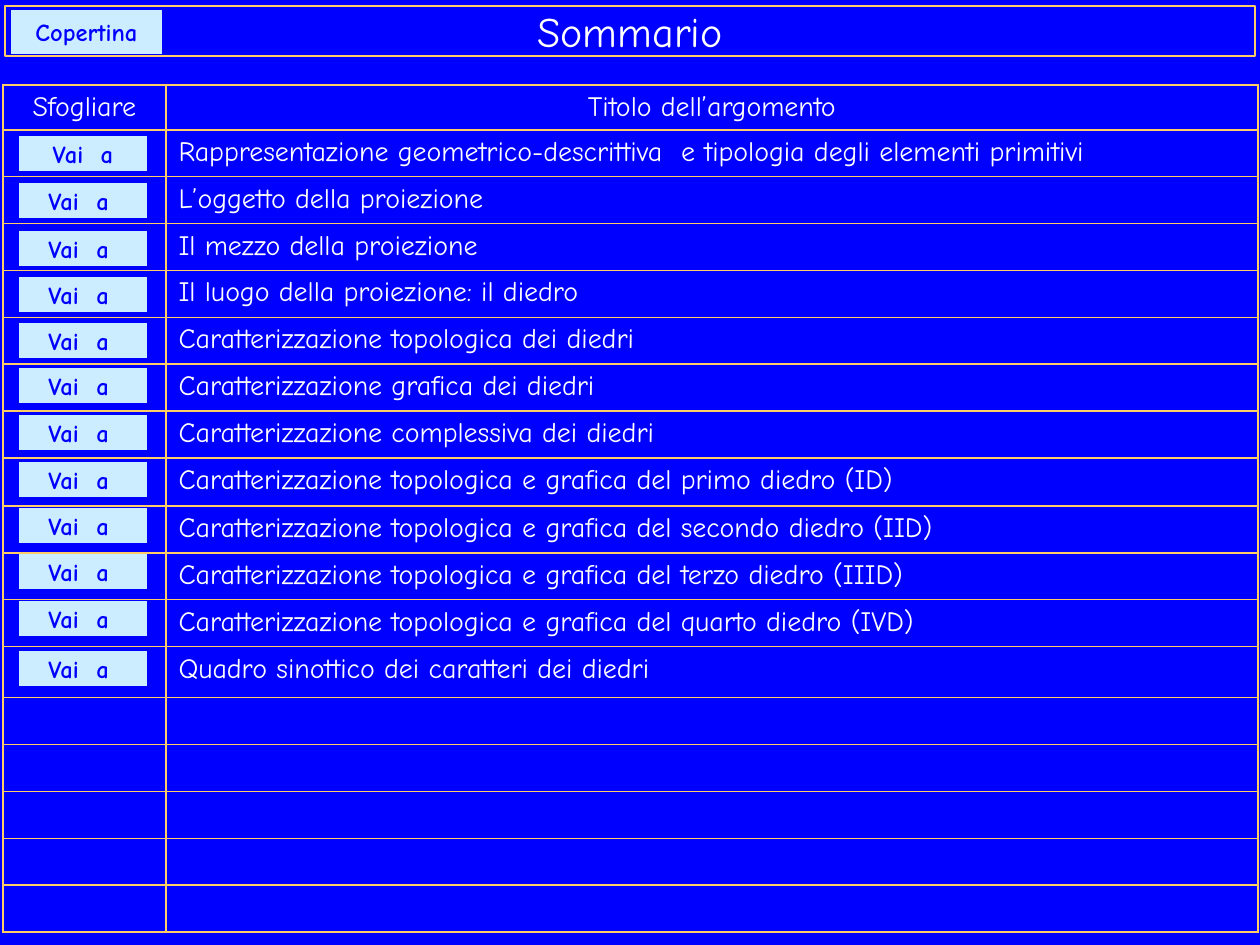
"""Build the summary slide with its table of topics and navigation buttons."""
import lxml.etree
import pptx
import pptx.dml.color
import pptx.enum.shapes
import pptx.enum.text
import pptx.oxml.ns
import pptx.util

BLUE = pptx.dml.color.RGBColor(0x00, 0x00, 0xFF)
WHITE = pptx.dml.color.RGBColor(0xFF, 0xFF, 0xFF)
GOLD = pptx.dml.color.RGBColor(0xFF, 0xCC, 0x66)
SKY = pptx.dml.color.RGBColor(0xCC, 0xEC, 0xFF)

CENTER = pptx.enum.text.PP_ALIGN.CENTER
LEFT = pptx.enum.text.PP_ALIGN.LEFT
MIDDLE = pptx.enum.text.MSO_ANCHOR.MIDDLE

TOPICS = [
    "Rappresentazione geometrico-descrittiva  e tipologia degli elementi primitivi",
    "L’oggetto della proiezione",
    "Il mezzo della proiezione",
    "Il luogo della proiezione: il diedro",
    "Caratterizzazione topologica dei diedri",
    "Caratterizzazione grafica dei diedri",
    "Caratterizzazione complessiva dei diedri",
    "Caratterizzazione topologica e grafica del primo diedro (ID)",
    "Caratterizzazione topologica e grafica del secondo diedro (IID)",
    "Caratterizzazione topologica e grafica del terzo diedro (IIID)",
    "Caratterizzazione topologica e grafica del quarto diedro (IVD)",
    "Quadro sinottico dei caratteri dei diedri",
]
EMPTY_ROWS = 5
COLUMN_WIDTHS = [163, 1092]
ROW_HEIGHTS = [44, 45, 45, 45, 45, 44, 45, 45, 48, 47, 45, 45, 51, 45, 45, 44, 45, 45]
BUTTON_TOPS = [136, 183, 231, 277, 323, 368, 415, 462, 508, 554, 601, 651]


class SlideBuilder:
    """Hold the style and the current slide."""

    font = "Comic Neue"
    scale = pptx.util.Inches(1) / 126

    def __init__(self, page):
        """Start on a page with a blue background."""
        self.page = page
        page.background.fill.solid()
        page.background.fill.fore_color.rgb = BLUE

    def emu(self, *lengths):
        """Turn px into EMU."""
        return [pptx.util.Emu(round(length * self.scale)) for length in lengths]

    def add_text(self, frame, text, size, color, align=CENTER, bold=False):
        """Add one run to the first paragraph of a frame."""
        para = frame.paragraphs[0]
        para.alignment = align
        span = para.add_run()
        span.text = text
        span.font.name = self.font
        span.font.size = pptx.util.Pt(size)
        span.font.bold = bold
        span.font.color.rgb = color

    def title(self, text, *place):
        """Place and outline the title placeholder."""
        box = self.page.shapes.title
        box.left, box.top, box.width, box.height = self.emu(*place)
        box.fill.background()
        box.line.color.rgb = GOLD
        box.line.width = pptx.util.Pt(1)
        box.text_frame.auto_size = pptx.enum.text.MSO_AUTO_SIZE.NONE
        box.text_frame.vertical_anchor = MIDDLE
        self.add_text(box.text_frame, text, 24, WHITE)

    def button(self, text, *place):
        """Add a navigation button."""
        kind = pptx.enum.shapes.MSO_SHAPE.ACTION_BUTTON_CUSTOM
        box = self.page.shapes.add_shape(kind, *self.emu(*place))
        box.shadow.inherit = False
        box.fill.solid()
        box.fill.fore_color.rgb = SKY
        box.line.fill.background()
        box.text_frame.vertical_anchor = MIDDLE
        self.add_text(box.text_frame, text, 14, BLUE, bold=True)

    def border(self, cell):
        """Draw a thin gold line on each side of a cell."""
        name = pptx.oxml.ns.qn
        properties = cell._tc.get_or_add_tcPr()
        for index, side in enumerate(["a:lnL", "a:lnR", "a:lnT", "a:lnB"]):
            line = lxml.etree.Element(name(side), w=str(pptx.util.Pt(1)))
            fill = lxml.etree.SubElement(line, name("a:solidFill"))
            lxml.etree.SubElement(fill, name("a:srgbClr"), val=str(GOLD))
            properties.insert(index, line)

    def table(self, rows, widths, heights, left, top):
        """Add an outlined table with a centred heading row."""
        place = self.emu(left, top, sum(widths), sum(heights))
        grid = self.page.shapes.add_table(len(rows), len(widths), *place).table
        grid.first_row = grid.horz_banding = False
        for column, width in zip(grid.columns, self.emu(*widths)):
            column.width = width
        for row, height in zip(grid.rows, self.emu(*heights)):
            row.height = height
        for row_index, row in enumerate(rows):
            for column_index, text in enumerate(row):
                cell = grid.cell(row_index, column_index)
                cell.fill.background()
                self.border(cell)
                if text:
                    align = LEFT if row_index else CENTER
                    self.add_text(cell.text_frame, text, 16, WHITE, align)
                else:
                    para = cell.text_frame.paragraphs[0]._p
                    tag = pptx.oxml.ns.qn("a:endParaRPr")
                    lxml.etree.SubElement(para, tag, sz="1600")


def main():
    """Build and save the deck."""
    deck = pptx.Presentation()
    deck.slide_width = pptx.util.Inches(10)
    deck.slide_height = pptx.util.Inches(7.5)
    builder = SlideBuilder(deck.slides.add_slide(deck.slide_layouts[5]))
    builder.title("Sommario", 5, 6, 1250, 50)
    rows = [("Sfogliare", "Titolo dell’argomento")]
    rows += [("", topic) for topic in TOPICS] + [("", "")] * EMPTY_ROWS
    builder.table(rows, COLUMN_WIDTHS, ROW_HEIGHTS, 3, 85)
    builder.button("Copertina", 11, 10, 151, 44)
    for index, top in enumerate(BUTTON_TOPS):
        builder.button("Vai  a " if index else "Vai  a", 19, top, 128, 35)
    deck.save("out.pptx")


if __name__ == "__main__":
    main()
